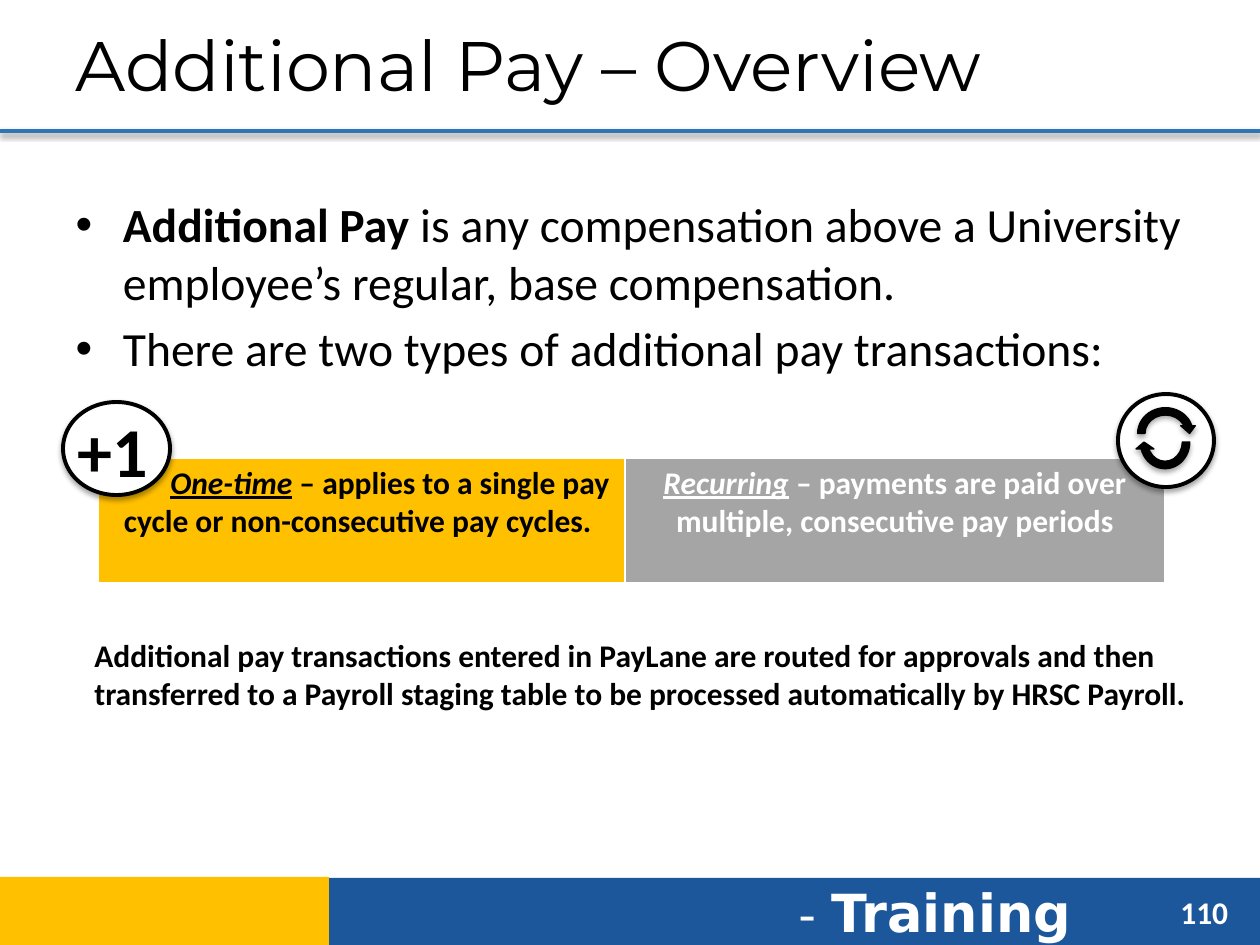
import pptx
import pptx.util
import pptx.dml.color
import pptx.enum.shapes
import pptx.enum.text
import pptx.oxml
import pptx.oxml.ns

SHAPES = pptx.enum.shapes.MSO_SHAPE
ALIGN = pptx.enum.text.PP_ALIGN
SCALE = 914400 / 126
COLORS = {"blue": "1D579B", "gold": "FFC000", "gray": "A5A5A5",
          "rule": "2E75B6", "black": "000000", "white": "FFFFFF"}

TITLE = "Additional Pay – Overview"
BULLETS = [
    [("Additional Pay ", "b"),
     ("is any compensation above a University employee’s regular, base compensation.", "")],
    [("There are two types of additional pay transactions:", "")],
]
PAY_TYPES = [
    {"width": 527, "fill": "gold", "color": "black", "indent": 57,
     "runs": [("One-time", "biu"),
              (" – applies to a single pay cycle or non-consecutive pay cycles. ", "b")]},
    {"width": 540, "fill": "gray", "color": "white", "indent": 0,
     "runs": [("Recurring", "biu"),
              (" – payments are paid over multiple, consecutive pay periods", "b")]},
]
NOTE = ("Additional pay transactions entered in PayLane are routed for approvals and then "
        "transferred to a Payroll staging table to be processed automatically by HRSC Payroll.")
BORDERS = {"lnL": 1, "lnR": 1, "lnT": 1, "lnB": 3}
ARROWS = [((1135, 410, 60, 64), 180, 0.15), ((1134, 404, 63, 59), 0, 0.125)]


def px(value):
    return pptx.util.Emu(round(value * SCALE))


def box(*lengths):
    return [px(length) for length in lengths]


def rgb(name):
    return pptx.dml.color.RGBColor.from_string(COLORS[name])


def xml(text):
    return pptx.oxml.parse_xml(text.replace(">", " " + pptx.oxml.ns.nsdecls("a") + ">", 1))


def add_run(paragraph, text, size, color, style="", font="Calibri"):
    run = paragraph.add_run()
    run.text = text
    run.font.name = font
    run.font.size = pptx.util.Pt(size)
    run.font.color.rgb = rgb(color)
    run.font.bold = "b" in style
    run.font.italic = "i" in style
    run.font.underline = "u" in style


def add_text(shapes, place):
    text_box = shapes.add_textbox(*box(*place))
    text_box.text_frame.word_wrap = True
    return text_box.text_frame.paragraphs[0]


def add_shadow(shape, alpha, distance):
    shape.element.spPr.append(xml(
        f'<a:effectLst><a:outerShdw blurRad="{pptx.util.Pt(3.1)}" '
        f'dist="{pptx.util.Pt(distance)}" dir="5400000" rotWithShape="0">'
        f'<a:srgbClr val="{COLORS["black"]}"><a:alpha val="{alpha * 1000}"/></a:srgbClr>'
        '</a:outerShdw></a:effectLst>'))


def add_filled(shapes, kind, place, fill, line_width=0):
    shape = shapes.add_shape(kind, *box(*place))
    shape.fill.solid()
    shape.fill.fore_color.rgb = rgb(fill)
    if line_width:
        shape.line.color.rgb = rgb("black")
        shape.line.width = pptx.util.Pt(line_width)
        add_shadow(shape, 35, 1.8)
    else:
        shape.line.fill.background()
        shape.shadow.inherit = False
    return shape


def add_frame(slide):
    shapes = slide.shapes
    add_filled(shapes, SHAPES.RECTANGLE, (329, 878, 931, 69), "blue")
    add_filled(shapes, SHAPES.RECTANGLE, (-2, 877, 331, 69), "gold")
    brand = add_text(shapes, (786, 874, 353, 77))
    add_run(brand, "- ", 28, "white", font="DejaVu Sans")
    add_run(brand, "Training", 30, "white", "b", "DejaVu Sans")
    add_run(add_text(shapes, (1168, 887, 76, 50)), "110", 18, "white", "b")
    rule = shapes.add_connector(
        pptx.enum.shapes.MSO_CONNECTOR.STRAIGHT, *box(0, 131, 1260, 131))
    rule.line.color.rgb = rgb("rule")
    rule.line.width = pptx.util.Pt(2.25)
    add_shadow(rule, 38, 1.6)


def fill_placeholders(slide):
    title, body = slide.shapes.title, slide.placeholders[1]
    for shape, place in ((title, (63, 5, 1134, 117)), (body, (63, 189, 1134, 228))):
        shape.left, shape.top, shape.width, shape.height = box(*place)
        shape.text_frame.auto_size = pptx.enum.text.MSO_AUTO_SIZE.NONE
    heading = title.text_frame.paragraphs[0]
    heading.alignment = ALIGN.LEFT
    add_run(heading, TITLE, 40, "black", font="Montserrat")
    frame = body.text_frame
    for index, runs in enumerate(BULLETS):
        paragraph = frame.add_paragraph() if index else frame.paragraphs[0]
        paragraph.space_before = pptx.util.Pt(5.4 if index else 0)
        for text, style in runs:
            add_run(paragraph, text, 27.2, "black", style)


def add_pay_table(slide):
    width = sum(kind["width"] for kind in PAY_TYPES)
    table = slide.shapes.add_table(1, len(PAY_TYPES), *box(98, 458, width, 126)).table
    table.first_row = table.horz_banding = False
    for index, kind in enumerate(PAY_TYPES):
        table.columns[index].width = px(kind["width"])
        cell = table.cell(0, index)
        cell.fill.solid()
        cell.fill.fore_color.rgb = rgb(kind["fill"])
        properties = cell._tc.get_or_add_tcPr()
        for position, (side, points) in enumerate(BORDERS.items()):
            properties.insert(position, xml(
                f'<a:{side} w="{pptx.util.Pt(points)}"><a:solidFill>'
                f'<a:srgbClr val="{COLORS["white"]}"/></a:solidFill></a:{side}>'))
        paragraph = cell.text_frame.paragraphs[0]
        paragraph.alignment = ALIGN.CENTER
        paragraph._p.get_or_add_pPr().set("indent", str(px(kind["indent"])))
        for text, style in kind["runs"]:
            add_run(paragraph, text, 18, kind["color"], style)


def add_badges(slide):
    once = slide.shapes.add_group_shape().shapes
    add_filled(once, SHAPES.OVAL, (63, 402, 107, 93), "white", 2.25)
    add_run(add_text(once, (65, 401, 106, 79)), "+1", 40, "black", "b")
    repeat = slide.shapes.add_group_shape().shapes
    add_filled(repeat, SHAPES.OVAL, (1118, 394, 96, 93), "white", 2.25)
    for place, rotation, head in ARROWS:
        arrow = add_filled(repeat, SHAPES.CIRCULAR_ARROW, place, "black", 0.75)
        arrow.rotation = rotation
        arrow.adjustments[4] = head


def main():
    presentation = pptx.Presentation()
    presentation.slide_width, presentation.slide_height = box(1260, 945)
    slide = presentation.slides.add_slide(presentation.slide_layouts[1])
    add_frame(slide)
    fill_placeholders(slide)
    add_pay_table(slide)
    add_badges(slide)
    add_run(add_text(slide.shapes, (82, 630, 1144, 165)), NOTE, 18, "black", "b")
    presentation.save("out.pptx")


if __name__ == "__main__":
    main()
